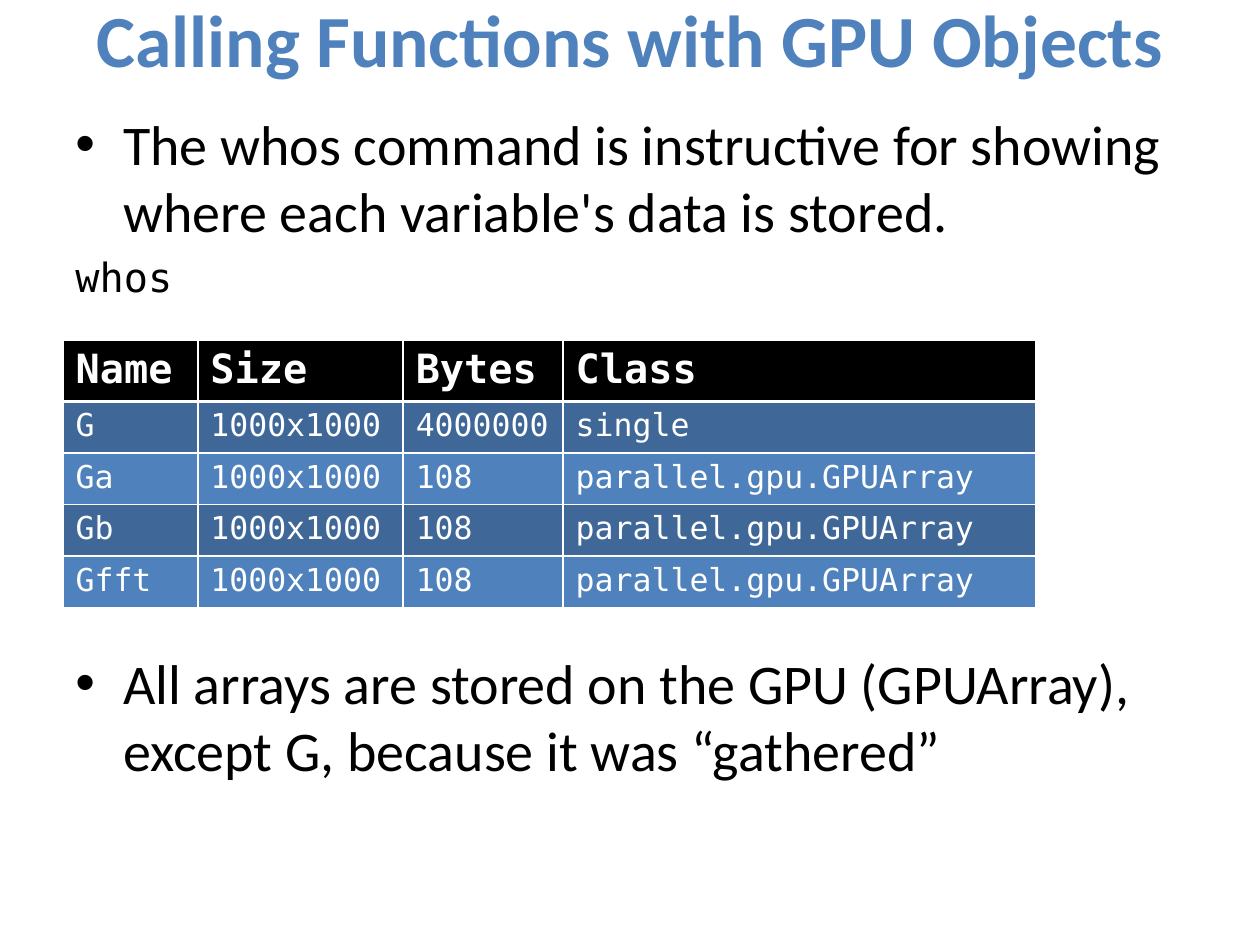
import pptx
import pptx.dml.color
import pptx.enum.text
import pptx.oxml
import pptx.oxml.ns
import pptx.util
from pptx.util import Inches

COLORS = {
    "title": "4F81BD",
    "text": "000000",
    "header": "000000",
    "dark_row": "3F6797",
    "light_row": "4F81BD",
    "cell_text": "FFFFFF",
    "rule": "FFFFFF",
}
SANS = "Calibri"
MONO = "DejaVu Sans Mono"

COLUMN_WIDTHS = [1.07, 1.63, 1.27, 3.75]
HEADER_HEIGHT = 0.47
ROW_HEIGHT = 0.41
VARIABLES = [
    ["Name", "Size", "Bytes", "Class"],
    ["G", "1000x1000", "4000000", "single"],
    ["Ga", "1000x1000", "108", "parallel.gpu.GPUArray"],
    ["Gb", "1000x1000", "108", "parallel.gpu.GPUArray"],
    ["Gfft", "1000x1000", "108", "parallel.gpu.GPUArray"],
]


def rgb(name):
    return pptx.dml.color.RGBColor.from_string(COLORS[name])


def add_span(para, text, font, size, color, bold=False):
    span = para.add_run()
    span.text = text
    span.font.name = font
    span.font.size = pptx.util.Pt(size)
    span.font.bold = bold
    span.font.color.rgb = rgb(color)


def add_text_box(page, left, top, width, height):
    box = page.shapes.add_textbox(Inches(left), Inches(top), Inches(width), Inches(height))
    box.text_frame.word_wrap = True
    box.text_frame.vertical_anchor = pptx.enum.text.MSO_ANCHOR.TOP
    return box.text_frame


def add_bullet(para, text):
    properties = para._p.get_or_add_pPr()
    properties.set("marL", str(Inches(0.38)))
    properties.set("indent", str(Inches(-0.38)))
    namespace = pptx.oxml.ns.nsdecls("a")
    properties.append(pptx.oxml.parse_xml(f'<a:buFont {namespace} typeface="Arial"/>'))
    properties.append(pptx.oxml.parse_xml(f'<a:buChar {namespace} char="•"/>'))
    add_span(para, text, SANS, 32, "text")


def add_bottom_rule(cell):
    rule = pptx.oxml.parse_xml(
        f'<a:lnB {pptx.oxml.ns.nsdecls("a")} w="{pptx.util.Pt(2)}"><a:solidFill>'
        f'<a:srgbClr val="{COLORS["rule"]}"/></a:solidFill></a:lnB>'
    )
    # Borders must come before the fill in the cell properties.
    cell._tc.get_or_add_tcPr().insert(0, rule)


def add_variable_table(page, left, top):
    height = HEADER_HEIGHT + ROW_HEIGHT * (len(VARIABLES) - 1)
    table = page.shapes.add_table(
        len(VARIABLES), len(COLUMN_WIDTHS),
        Inches(left), Inches(top), Inches(sum(COLUMN_WIDTHS)), Inches(height),
    ).table
    for column, width in zip(table.columns, COLUMN_WIDTHS):
        column.width = Inches(width)
    for number, values in enumerate(VARIABLES):
        is_header = number == 0
        table.rows[number].height = Inches(HEADER_HEIGHT if is_header else ROW_HEIGHT)
        fill = "header" if is_header else "dark_row" if number % 2 else "light_row"
        for cell, value in zip(table.rows[number].cells, values):
            cell.fill.solid()
            cell.fill.fore_color.rgb = rgb(fill)
            add_span(cell.text_frame.paragraphs[0], value, MONO,
                     23 if is_header else 18, "cell_text", is_header)
            if is_header:
                add_bottom_rule(cell)


def main():
    deck = pptx.Presentation()
    deck.slide_width, deck.slide_height = Inches(10), Inches(7.5)
    page = deck.slides.add_slide(deck.slide_layouts[6])

    title = add_text_box(page, 0, -0.1, 10, 1.25).paragraphs[0]
    title.alignment = pptx.enum.text.PP_ALIGN.CENTER
    add_span(title, "Calling Functions with GPU Objects", SANS, 42, "title", True)

    intro = add_text_box(page, 0.5, 0.82, 9, 1.7)
    add_bullet(intro.paragraphs[0], "The whos command is instructive for showing "
               "where each variable's data is stored.")
    command = intro.add_paragraph()
    command.space_before = pptx.util.Pt(4.6)
    add_span(command, "whos", MONO, 23, "text")

    add_variable_table(page, 0.5, 2.7)

    conclusion = add_text_box(page, 0.5, 5.1, 9, 1.2)
    add_bullet(conclusion.paragraphs[0], "All arrays are stored on the GPU (GPUArray), "
               "except G, because it was “gathered”")

    deck.save("out.pptx")


if __name__ == "__main__":
    main()
